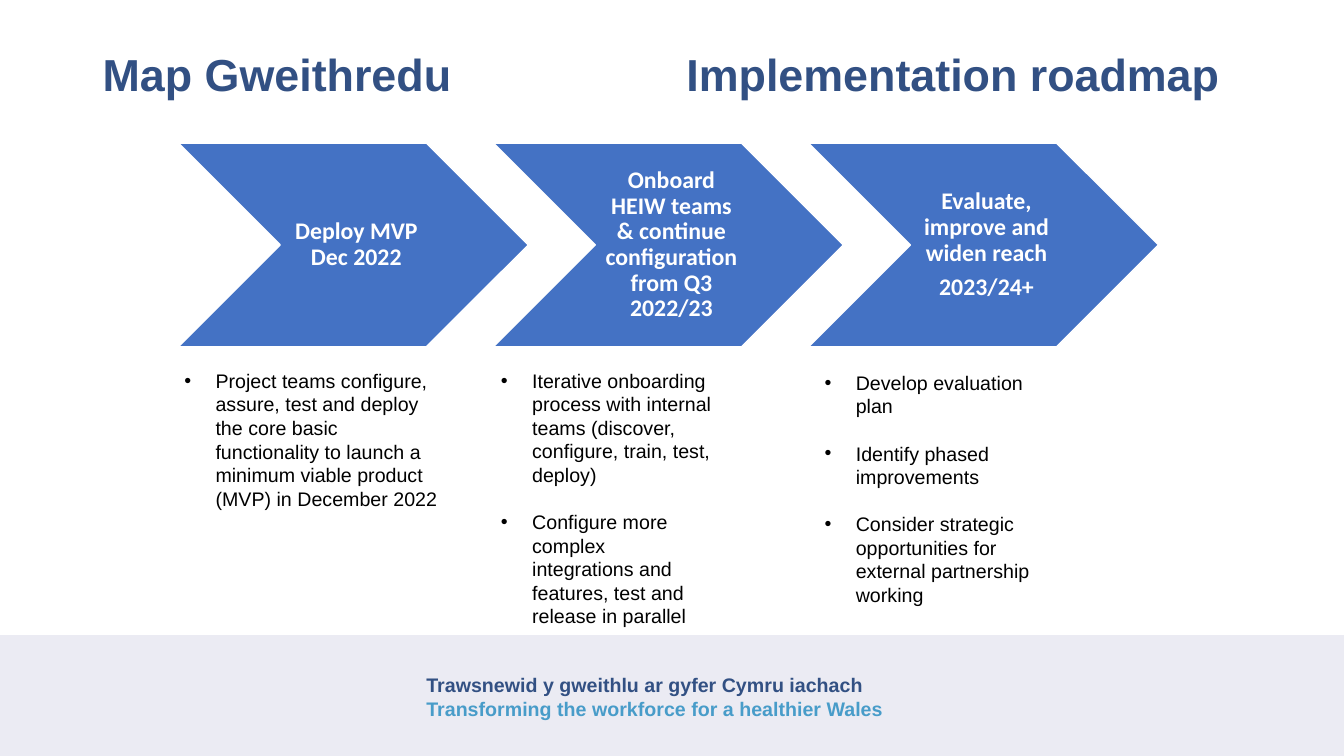
"""Build the bilingual implementation roadmap slide."""
import pptx
import pptx.dml.color
import pptx.enum.shapes
import pptx.enum.text
import pptx.oxml.ns
import pptx.util
from lxml import etree
from pptx.util import Inches

RGBColor = pptx.dml.color.RGBColor
NAVY = RGBColor(0x32, 0x50, 0x83)
SKY = RGBColor(0x48, 0x9C, 0xC9)
BLUE = RGBColor(0x44, 0x72, 0xC4)
LAVENDER = RGBColor(0xEB, 0xEB, 0xF3)
WHITE = RGBColor(0xFF, 0xFF, 0xFF)
BLACK = RGBColor(0, 0, 0)
MIDDLE = pptx.enum.text.MSO_ANCHOR.MIDDLE
SHAPES = pptx.enum.shapes.MSO_SHAPE
qn = pptx.oxml.ns.qn

STAGES = [
    (["Deploy MVP Dec 2022"], (1.73, 3.61, 2.8, 1.51),
     ["Project teams configure, assure, test and deploy the core basic functionality "
      "to launch a minimum viable product (MVP) in December 2022"]),
    (["Onboard HEIW teams & continue configuration from Q3 2022/23"], (4.87, 3.61, 2.29, 2.96),
     ["Iterative onboarding process with internal teams (discover, configure, train, test, deploy)",
      "Configure more complex integrations and features, test and release in parallel"]),
    (["Evaluate, improve and widen reach", "2023/24+"], (8.08, 3.63, 2.29, 2.46),
     ["Develop evaluation plan",
      "Identify phased improvements",
      "Consider strategic opportunities for external partnership working"]),
]

deck = pptx.Presentation()
deck.slide_width = Inches(13.33)
deck.slide_height = Inches(7.5)
page = deck.slides.add_slide(deck.slide_layouts[6])


def add_text(position, lines, size, color, bold=False, font="Arial", gap=0):
    box = page.shapes.add_textbox(*[Inches(length) for length in position])
    frame = box.text_frame
    frame.word_wrap = True
    frame.text = "\n".join(lines)
    for number, para in enumerate(frame.paragraphs):
        if number and gap:
            para.space_before = pptx.util.Pt(gap)
        for span in para.runs:
            span.font.name = font
            span.font.size = pptx.util.Pt(size)
            span.font.bold = bold
            span.font.color.rgb = color
    return frame


def add_block(kind, position, fill):
    block = page.shapes.add_shape(kind, *[Inches(length) for length in position])
    block.shadow.inherit = False
    block.fill.solid()
    block.fill.fore_color.rgb = fill
    block.line.fill.background()
    return block


add_block(SHAPES.RECTANGLE, (0, 6.3, 13.33, 1.2), LAVENDER)
footer = add_text(
    (4.13, 6.63, 5, 0.57),
    ["Trawsnewid y gweithlu ar gyfer Cymru iachach", "Transforming the workforce for a healthier Wales"],
    14, NAVY, bold=True)
footer.paragraphs[1].runs[0].font.color.rgb = SKY

title = add_text((0.92, 0.3, 11.5, 0.92), ["Map Gweithredu\tImplementation roadmap"], 32, NAVY, bold=True)
title.vertical_anchor = MIDDLE
title.paragraphs[0].line_spacing = 0.9
tab_list = etree.SubElement(title.paragraphs[0]._p.get_or_add_pPr(), qn("a:tabLst"))
etree.SubElement(tab_list, qn("a:tab"), pos=str(Inches(5.79)), algn="l")

for index, (heading, details_position, details) in enumerate(STAGES):
    left = 1.77 + index * 3.125
    chevron = add_block(SHAPES.CHEVRON, (left, 1.42, 3.47, 2.02), BLUE)
    chevron.line.color.rgb = WHITE
    chevron.line.width = pptx.util.Pt(1)

    label = add_text((left + 1.01, 1.42, 1.46, 2.02), heading, 17, WHITE, bold=True, font="Calibri", gap=6)
    label.vertical_anchor = MIDDLE
    label.margin_left = Inches(0.07)
    label.margin_top = label.margin_right = label.margin_bottom = Inches(0.02)
    for para in label.paragraphs:
        para.alignment = pptx.enum.text.PP_ALIGN.CENTER
        para.line_spacing = 0.9

    bullets = add_text(details_position, details, 14, BLACK, gap=16.8)
    for para in bullets.paragraphs:
        properties = para._p.get_or_add_pPr()
        properties.set("marL", str(Inches(0.31)))
        properties.set("indent", str(Inches(-0.31)))
        etree.SubElement(properties, qn("a:buFont"), typeface="Arial")
        etree.SubElement(properties, qn("a:buChar"), char="•")

deck.save("out.pptx")
